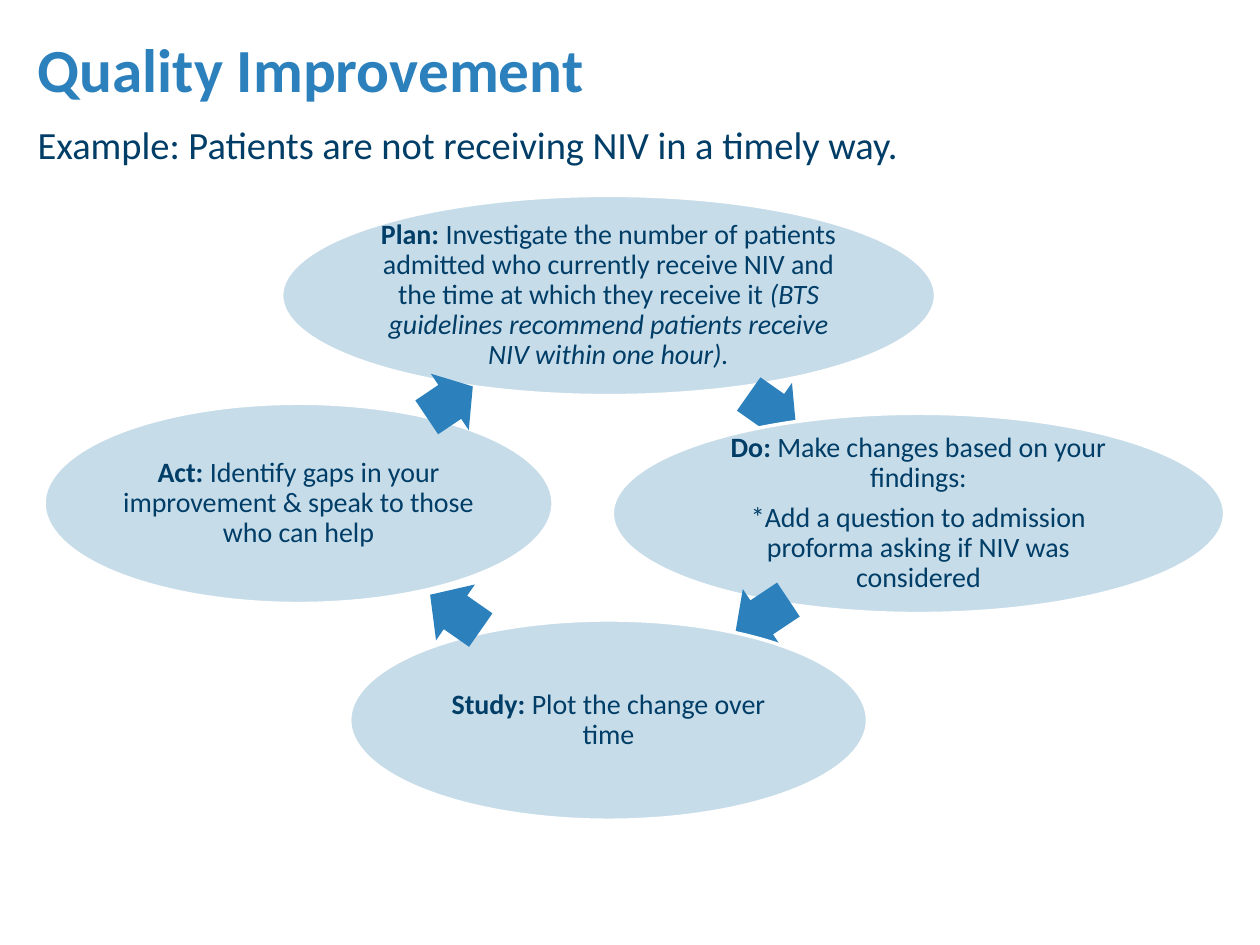
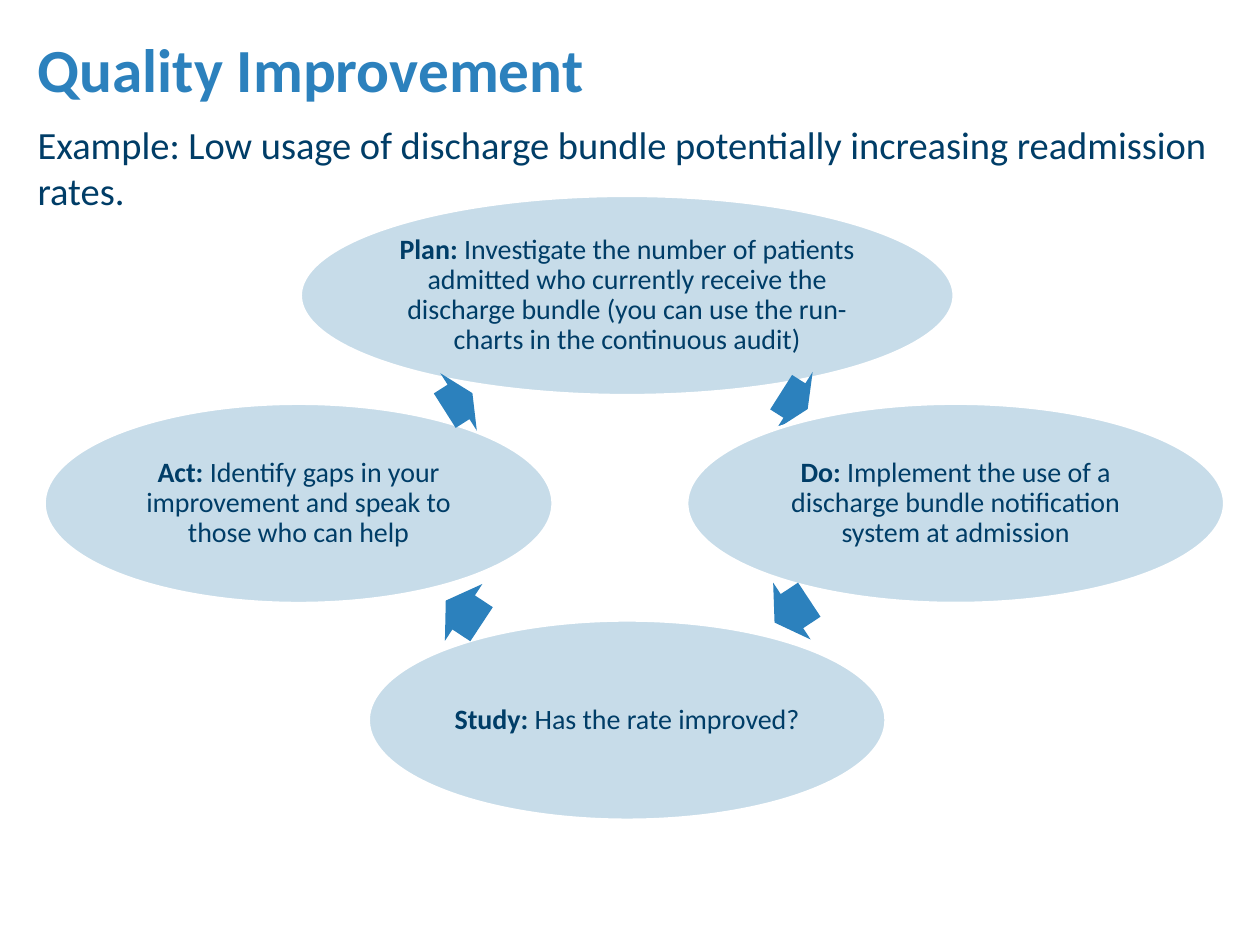
from dataclasses import dataclass

from pptx import Presentation
from pptx.dml.color import RGBColor
from pptx.enum.shapes import MSO_SHAPE
from pptx.enum.text import MSO_ANCHOR, MSO_AUTO_SIZE, PP_ALIGN
from pptx.util import Inches, Pt

OVAL, ARROW = MSO_SHAPE.OVAL, MSO_SHAPE.RIGHT_ARROW
TOP, MIDDLE = MSO_ANCHOR.TOP, MSO_ANCHOR.MIDDLE
LEFT, CENTER = PP_ALIGN.LEFT, PP_ALIGN.CENTER

# Shared look
COLORS = {"blue": "2C81BD", "navy": "003D67", "pale": "C7DCE9", "white": "FFFFFF"}
TITLE_FONT = {"name": "Calibri", "size": Pt(35), "bold": True}
EXAMPLE_FONT = {"name": "Calibri", "size": Pt(22)}
STEP_FONT = {"name": "Calibri", "size": Pt(16)}
MARGINS = ("margin_left", "margin_top", "margin_right", "margin_bottom")

# Cycle geometry in inches
OVAL_H, ARROW_H = 1.59, 0.54
PLAN_W, STUDY_W, ACT_W = 5.19, 4.11, 4.04
RING_LEFT, RING_RIGHT = 0.35, 9.72
PLAN_TOP, SIDE_TOP, STUDY_TOP = 1.55, 3.2, 4.92


@dataclass
class Step:
    lead: str
    text: str
    italic: str = ""   # closing words in italics
    extra: str = ""    # second paragraph


@dataclass
class Arrow:
    left: float
    top: float
    width: float
    angle: float


@dataclass
class Cycle:
    example: str
    example_h: float
    do_width: float
    do_top: float
    steps: list[Step]    # Plan, Do, Study, Act
    arrows: list[Arrow]  # each follows the step of the same index


CYCLES = [
    Cycle(
        "Example: Patients are not receiving NIV in a timely way.",
        0.47, 4.86, 3.28,
        [
            Step("Plan: ", "Investigate the number of patients admitted who currently "
                 "receive NIV and the time at which they receive it ",
                 italic="(BTS guidelines recommend patients receive NIV within one hour)."),
            Step("Do: ", "Make changes based on your findings:",
                 extra="*Add a question to admission proforma asking if NIV was considered"),
            Step("Study: ", "Plot the change over time"),
            Step("Act: ", "Identify gaps in your improvement & speak to those who can help"),
        ],
        [Arrow(5.9, 2.99, 0.46, 35.1), Arrow(5.79, 4.63, 0.51, 146.3),
         Arrow(3.37, 4.59, 0.49, 214.9), Arrow(3.35, 2.92, 0.44, 326.1)],
    ),
    Cycle(
        "Example: Low usage of discharge bundle potentially increasing readmission rates.",
        0.84, 4.27, SIDE_TOP,
        [
            Step("Plan: ", "Investigate the number of patients admitted who currently receive "
                 "the discharge bundle (you can use the run-charts in the continuous audit)"),
            Step("Do: ", "Implement the use of a discharge bundle notification system at admission"),
            Step("Study: ", "Has the rate improved?"),
            Step("Act: ", "Identify gaps in your improvement and speak to those who can help"),
        ],
        [Arrow(6.18, 2.91, 0.25, 32.4), Arrow(6.12, 4.58, 0.33, 146.6),
         Arrow(3.51, 4.59, 0.34, 213.4), Arrow(3.51, 2.92, 0.26, 327.6)],
    ),
]


def rgb(name: str) -> RGBColor:
    return RGBColor.from_string(COLORS[name])


def add_run(p, text: str, color: str, fmt: dict) -> None:
    r = p.add_run()
    r.text = text
    for key, value in fmt.items():
        setattr(r.font, key, value)
    r.font.color.rgb = rgb(color)


def add_filled(s, kind, box: tuple, color: str):
    sp = s.shapes.add_shape(kind, *map(Inches, box))
    sp.shadow.inherit = False
    sp.fill.solid()
    sp.fill.fore_color.rgb = rgb(color)
    return sp


def add_heading(s, cycle: Cycle) -> None:
    # Title placeholder
    title = s.shapes.title
    title.left, title.top, title.width, title.height = map(Inches, (0.2, 0.29, 6.14, 0.92))
    tf = title.text_frame
    tf.auto_size = MSO_AUTO_SIZE.NONE
    tf.vertical_anchor = TOP
    p = tf.paragraphs[0]
    p.alignment, p.line_spacing = LEFT, 0.85
    add_run(p, "Quality Improvement", "blue", TITLE_FONT)


def add_example(s, cycle: Cycle) -> None:
    tf = s.shapes.add_textbox(*map(Inches, (0.2, 0.91, 9.62, cycle.example_h))).text_frame
    tf.word_wrap = True
    add_run(tf.paragraphs[0], cycle.example, "navy", EXAMPLE_FONT)


def add_step(s, step: Step, left: float, top: float, width: float) -> None:
    sp = add_filled(s, OVAL, (left, top, width, OVAL_H), "pale")
    sp.line.color.rgb = rgb("white")
    sp.line.width = Pt(2)
    tf = sp.text_frame
    tf.word_wrap = True
    tf.vertical_anchor = MIDDLE
    for margin in MARGINS:
        setattr(tf, margin, Inches(0.02))
    p = tf.paragraphs[0]
    add_run(p, step.lead, "navy", STEP_FONT | {"bold": True})
    add_run(p, step.text, "navy", STEP_FONT)
    if step.italic:
        add_run(p, step.italic, "navy", STEP_FONT | {"italic": True})
    if step.extra:
        p = tf.add_paragraph()
        p.space_before = Pt(5.6)
        add_run(p, step.extra, "navy", STEP_FONT)
    for p in tf.paragraphs:
        p.alignment, p.line_spacing = CENTER, 0.9


def add_arrow(s, arrow: Arrow) -> None:
    sp = add_filled(s, ARROW, (arrow.left, arrow.top, arrow.width, ARROW_H), "blue")
    sp.line.fill.background()
    sp.adjustments[0], sp.adjustments[1] = 0.6, 0.5
    sp.rotation = arrow.angle


def add_cycle(s, cycle: Cycle) -> None:
    # Plan and Study sit midway between the centres of Act and Do
    do_left = RING_RIGHT - cycle.do_width
    mid = (RING_LEFT + ACT_W / 2 + do_left + cycle.do_width / 2) / 2
    places = [
        (mid - PLAN_W / 2, PLAN_TOP, PLAN_W),
        (do_left, cycle.do_top, cycle.do_width),
        (mid - STUDY_W / 2, STUDY_TOP, STUDY_W),
        (RING_LEFT, SIDE_TOP, ACT_W),
    ]
    for step, place, arrow in zip(cycle.steps, places, cycle.arrows):
        add_step(s, step, *place)
        add_arrow(s, arrow)


def main() -> None:
    prs = Presentation()
    prs.slide_width, prs.slide_height = Inches(10), Inches(7.5)
    title_only = prs.slide_layouts[5]
    for cycle in CYCLES:
        s = prs.slides.add_slide(title_only)
        add_heading(s, cycle)
        add_cycle(s, cycle)
        add_example(s, cycle)
    prs.save("out.pptx")


if __name__ == "__main__":
    main()
